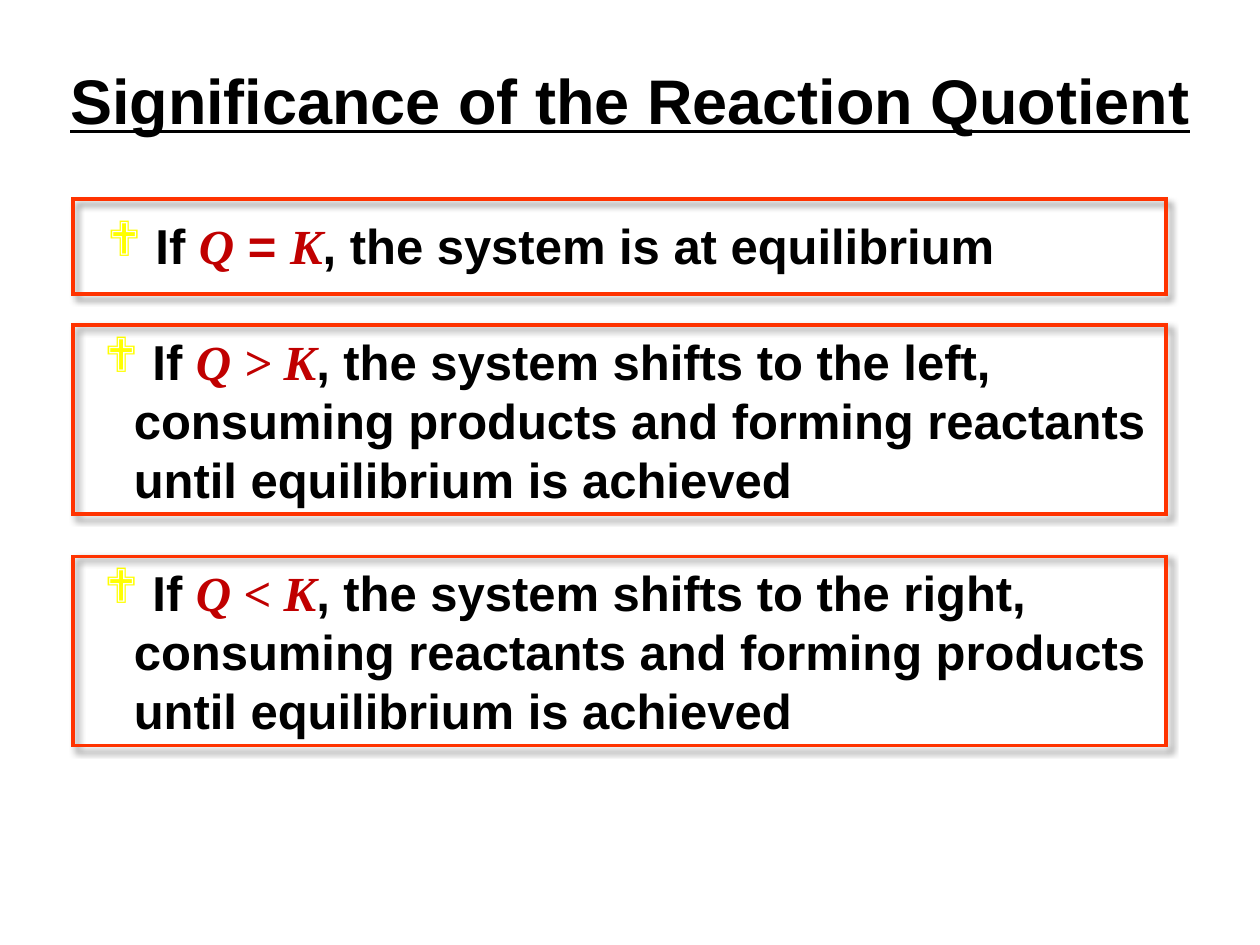
from lxml import etree
from pptx import Presentation
from pptx.dml.color import RGBColor
from pptx.enum.shapes import MSO_SHAPE
from pptx.enum.text import MSO_ANCHOR, MSO_AUTO_SIZE, PP_ALIGN
from pptx.oxml.ns import qn
from pptx.util import Cm, Pt

RECTANGLE = MSO_SHAPE.RECTANGLE
MIDDLE = MSO_ANCHOR.MIDDLE
CENTER = PP_ALIGN.CENTER
FIT_SHAPE = MSO_AUTO_SIZE.SHAPE_TO_FIT_TEXT

BLACK, RED, YELLOW, ORANGE = "000000", "C00000", "FFFF00", "FF3300"
SANS, SERIF, SYMBOLS = "Arial", "Times New Roman", "Wingdings"
VARIABLE = {"font": SERIF, "color": RED, "italic": True}

TITLE = "Significance of the Reaction Quotient"
CASES = [
    {
        "runs": [
            (" If ", {}),
            ("Q", VARIABLE),
            (" = ", {"color": RED}),
            ("K", VARIABLE),
            (", the system is at equilibrium", {}),
        ],
        "text": (1.91, 4.22, 1.45),
        "frame": (4.02, 1.91),
    },
    {
        "runs": [
            (" If ", {}),
            ("Q > K", VARIABLE),
            (", the system shifts to the left, consuming products and forming "
             "reactants until equilibrium is achieved", {}),
        ],
        "text": (1.85, 6.56, 3.81),
        "frame": (6.56, 3.81),
    },
    {
        "runs": [
            (" If ", {}),
            ("Q < K", VARIABLE),
            (", the system shifts to the right, consuming reactants and forming "
             "products until equilibrium is achieved", {}),
        ],
        "text": (1.85, 11.22, 3.81),
        "frame": (11.22, 3.81),
    },
]
FRAME_LEFT, BOX_WIDTH = 1.48, 22.03


def rgb(value):
    return RGBColor.from_string(value)


def add_text(paragraph, text, size=28, font=SANS, color=BLACK, italic=False, underline=False):
    run = paragraph.add_run()
    run.text = text
    run.font.size = Pt(size)
    run.font.name = font
    run.font.bold = True
    run.font.italic = italic
    run.font.underline = underline
    run.font.color.rgb = rgb(color)


def add_bullet(paragraph, character, color, indent):
    properties = paragraph._p.get_or_add_pPr()
    properties.set("marL", str(indent))
    properties.set("indent", str(-indent))
    bullet_color = etree.SubElement(properties, qn("a:buClr"))
    etree.SubElement(bullet_color, qn("a:srgbClr"), val=color)
    etree.SubElement(properties, qn("a:buFont"), typeface=SYMBOLS)
    etree.SubElement(properties, qn("a:buChar"), char=character)


def add_shadow(shape, color, opacity, blur, distance, angle):
    shape.shadow.inherit = False
    effects = shape._element.spPr.find(qn("a:effectLst"))
    shadow = etree.SubElement(
        effects, qn("a:outerShdw"), blurRad=str(Pt(blur)), dist=str(Pt(distance)),
        dir=str(angle * 60000), algn="tl", rotWithShape="0")
    shadow_color = etree.SubElement(shadow, qn("a:srgbClr"), val=color)
    etree.SubElement(shadow_color, qn("a:alpha"), val=str(opacity * 1000))


def add_title(slide):
    title = slide.shapes.title
    title.left, title.top, title.width, title.height = Cm(0.64), Cm(0.43), Cm(24.13), Cm(3.15)
    title.text_frame.vertical_anchor = MIDDLE
    paragraph = title.text_frame.paragraphs[0]
    paragraph.alignment = CENTER
    add_text(paragraph, TITLE, size=36, underline=True)


def add_statement(slide, runs, left, top, height):
    box = slide.shapes.add_textbox(Cm(left), Cm(top), Cm(BOX_WIDTH), Cm(height))
    box.text_frame.word_wrap = True
    box.text_frame.auto_size = FIT_SHAPE
    paragraph = box.text_frame.paragraphs[0]
    add_bullet(paragraph, "❖", YELLOW, Cm(0.6))
    for text, style in runs:
        add_text(paragraph, text, **style)


def add_frame(slide, top, height):
    frame = slide.shapes.add_shape(
        RECTANGLE, Cm(FRAME_LEFT), Cm(top), Cm(BOX_WIDTH), Cm(height))
    frame.fill.background()
    frame.line.color.rgb = rgb(ORANGE)
    frame.line.width = Pt(2.25)
    outline = frame._element.spPr.find(qn("a:ln"))
    etree.SubElement(outline, qn("a:miter"), lim="800000")
    add_shadow(frame, BLACK, opacity=40, blur=4, distance=3, angle=45)


def main():
    presentation = Presentation()
    presentation.slide_width, presentation.slide_height = Cm(25.4), Cm(19.05)
    slide = presentation.slides.add_slide(presentation.slide_layouts[5])
    add_title(slide)
    for case in CASES:
        add_statement(slide, case["runs"], *case["text"])
    for case in CASES:
        add_frame(slide, *case["frame"])
    presentation.save("out.pptx")


if __name__ == "__main__":
    main()
